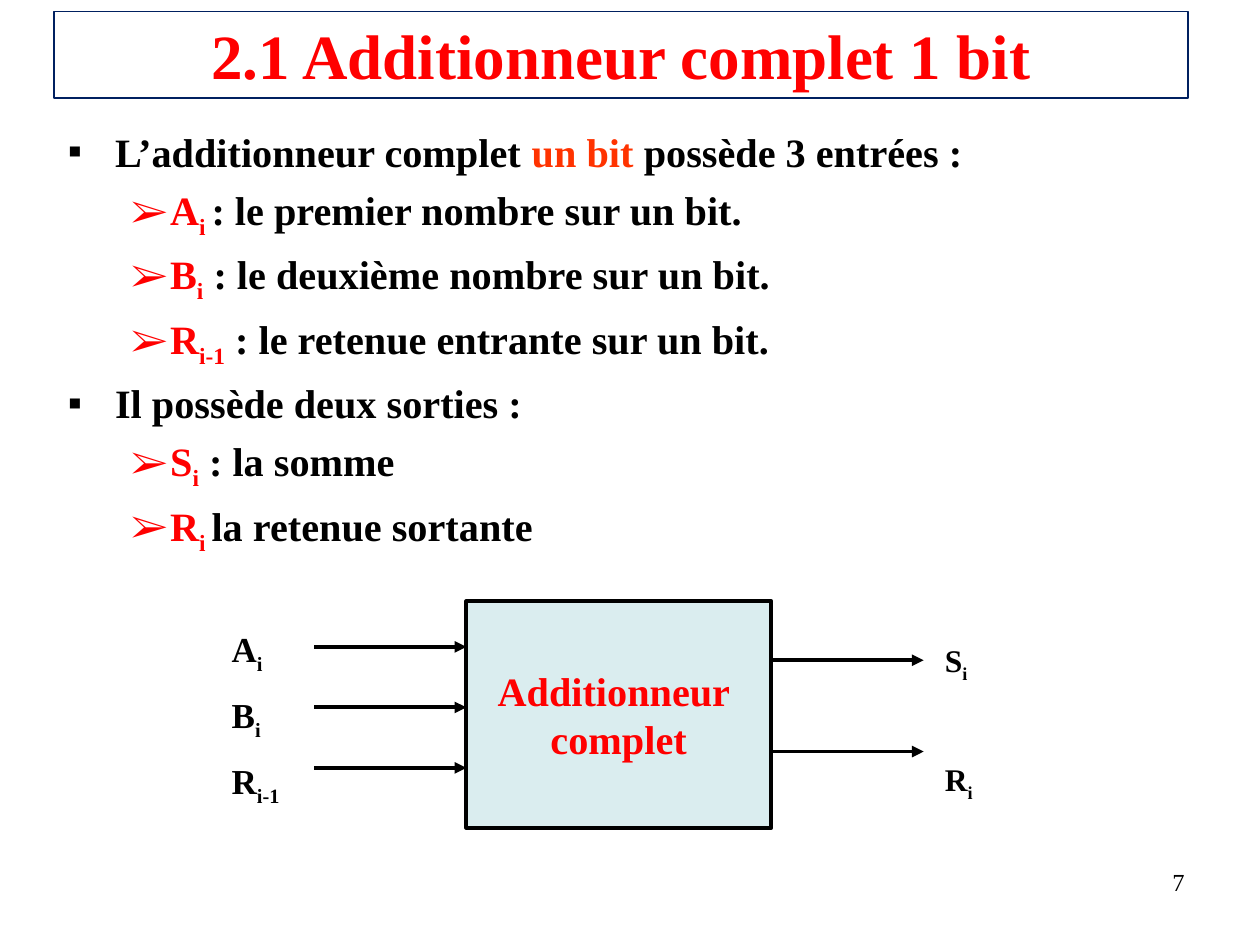
from lxml import etree
from pptx import Presentation
from pptx import util as u
from pptx.dml.color import RGBColor
from pptx.enum import shapes, text
from pptx.oxml.ns import qn

BLACK, RED, ORANGE, NAVY, PALE = "000000", "FF0000", "FF3300", "002060", "DAEDEF"
ALIGN = text.PP_ALIGN


def colour(hex_code):
    return RGBColor.from_string(hex_code)


def signal(name, index, ink=BLACK):
    """Runs for a signal name with its subscript."""
    return [(name, ink, False), (index, ink, True)]


class Board:
    """Holds the type style and the slide being drawn."""
    font = "Times New Roman"
    stroke = 2.25

    def __init__(self, slide):
        self.slide = slide

    def paragraph(self, frame, runs, size, bold=True, align=ALIGN.LEFT, before=0):
        """Add one paragraph; each run is (words, colour, is_subscript)."""
        first = frame.paragraphs[0]
        para = frame.add_paragraph() if first.runs else first
        para.alignment = align
        para.space_before = u.Pt(before)
        for words, ink, lowered in runs:
            run = para.add_run()
            run.text = words
            run.font.name, run.font.size, run.font.bold = self.font, u.Pt(size), bold
            run.font.color.rgb = colour(ink)
            if lowered:
                run._r.get_or_add_rPr().set("baseline", "-25000")
        return para

    def bullet(self, para, mark, ink, left, hang):
        props = para._p.get_or_add_pPr()
        props.set("marL", str(u.Cm(left)))
        props.set("indent", str(-u.Cm(hang)))
        tint = etree.SubElement(props, qn("a:buClr"))
        etree.SubElement(tint, qn("a:srgbClr")).set("val", ink)
        etree.SubElement(props, qn("a:buFont")).set("typeface", self.font)
        etree.SubElement(props, qn("a:buChar")).set("char", mark)

    def text_area(self, left, top, width, height):
        area = self.slide.shapes.add_textbox(*map(u.Cm, (left, top, width, height)))
        area.text_frame.word_wrap = True
        return area.text_frame

    def box(self, left, top, width, height, line, weight, fill=None):
        rect = self.slide.shapes.add_shape(
            shapes.MSO_SHAPE.RECTANGLE, *map(u.Cm, (left, top, width, height)))
        rect.shadow.inherit = False
        if fill:
            rect.fill.solid()
            rect.fill.fore_color.rgb = colour(fill)
        else:
            rect.fill.background()
        rect.line.color.rgb = colour(line)
        rect.line.width = u.Pt(weight)
        rect.text_frame.vertical_anchor = text.MSO_ANCHOR.MIDDLE
        return rect.text_frame

    def arrow(self, left, y, length):
        wire = self.slide.shapes.add_connector(
            shapes.MSO_CONNECTOR.STRAIGHT, *map(u.Cm, (left, y, left + length, y)))
        wire.line.color.rgb = colour(BLACK)
        wire.line.width = u.Pt(self.stroke)
        etree.SubElement(wire.line._get_or_add_ln(), qn("a:tailEnd")).set("type", "triangle")
        etree.SubElement(wire._element.spPr, qn("a:effectLst"))


def main():
    deck = Presentation()
    deck.slide_width, deck.slide_height = u.Cm(25.4), u.Cm(19.05)
    board = Board(deck.slides.add_slide(deck.slide_layouts[6]))

    page = board.text_area(18.21, 17.35, 5.92, 1.32)
    board.paragraph(page, [("7", BLACK, False)], 14, bold=False, align=ALIGN.RIGHT)

    title = board.box(1.09, 0.23, 22.86, 1.75, NAVY, 0.75)
    board.paragraph(title, [("2.1 Additionneur complet 1 bit", RED, False)], 36,
                    align=ALIGN.CENTER)

    inputs = [("A", "i ", ": le premier nombre sur un bit."),
              ("B", "i", " : le deuxième nombre sur un bit."),
              ("R", "i-1", " : le retenue entrante sur un bit.")]
    outputs = [("S", "i", " : la somme"), ("R", "i ", "la retenue sortante")]
    sections = [
        ([("L’additionneur complet ", BLACK, False), ("un bit", ORANGE, False),
          (" possède 3 entrées :", BLACK, False)], inputs),
        ([("Il possède deux sorties :", BLACK, False)], outputs),
    ]
    body = board.text_area(1.12, 2.44, 22.86, 8.89)
    for heading, signals in sections:
        para = board.paragraph(body, heading, 23, before=5.5)
        board.bullet(para, "▪", BLACK, 0.95, 0.95)
        for name, index, meaning in signals:
            runs = signal(name, index, RED) + [(meaning, BLACK, False)]
            para = board.paragraph(body, runs, 23, before=5.5)
            para.level = 1
            board.bullet(para, "➢", RED, 2.06, 0.79)

    adder_left, adder_width, wire_length = 9.4, 6.15, 3.07
    adder = board.box(adder_left, 12.12, adder_width, 4.57, BLACK, board.stroke, PALE)
    adder.word_wrap = False
    for word in ("Additionneur ", "complet"):
        board.paragraph(adder, [(word, RED, False)], 23, align=ALIGN.CENTER)

    for row in range(3):
        board.arrow(adder_left - wire_length, 13.04 + 1.22 * row, wire_length)
    for row in range(2):
        board.arrow(adder_left + adder_width, 13.31 + 1.84 * row, wire_length)

    input_labels = board.text_area(4.42, 12.52, 2.36, 4.8)
    for name, index, _ in inputs:
        board.paragraph(input_labels, signal(name, index.strip()), 20, before=10.5)
    output_labels = board.text_area(18.8, 12.8, 2.41, 2.92)
    for name, index, _ in outputs:
        board.paragraph(output_labels, signal(name, index.strip()), 18, before=43.5)

    deck.save("out.pptx")


if __name__ == "__main__":
    main()
